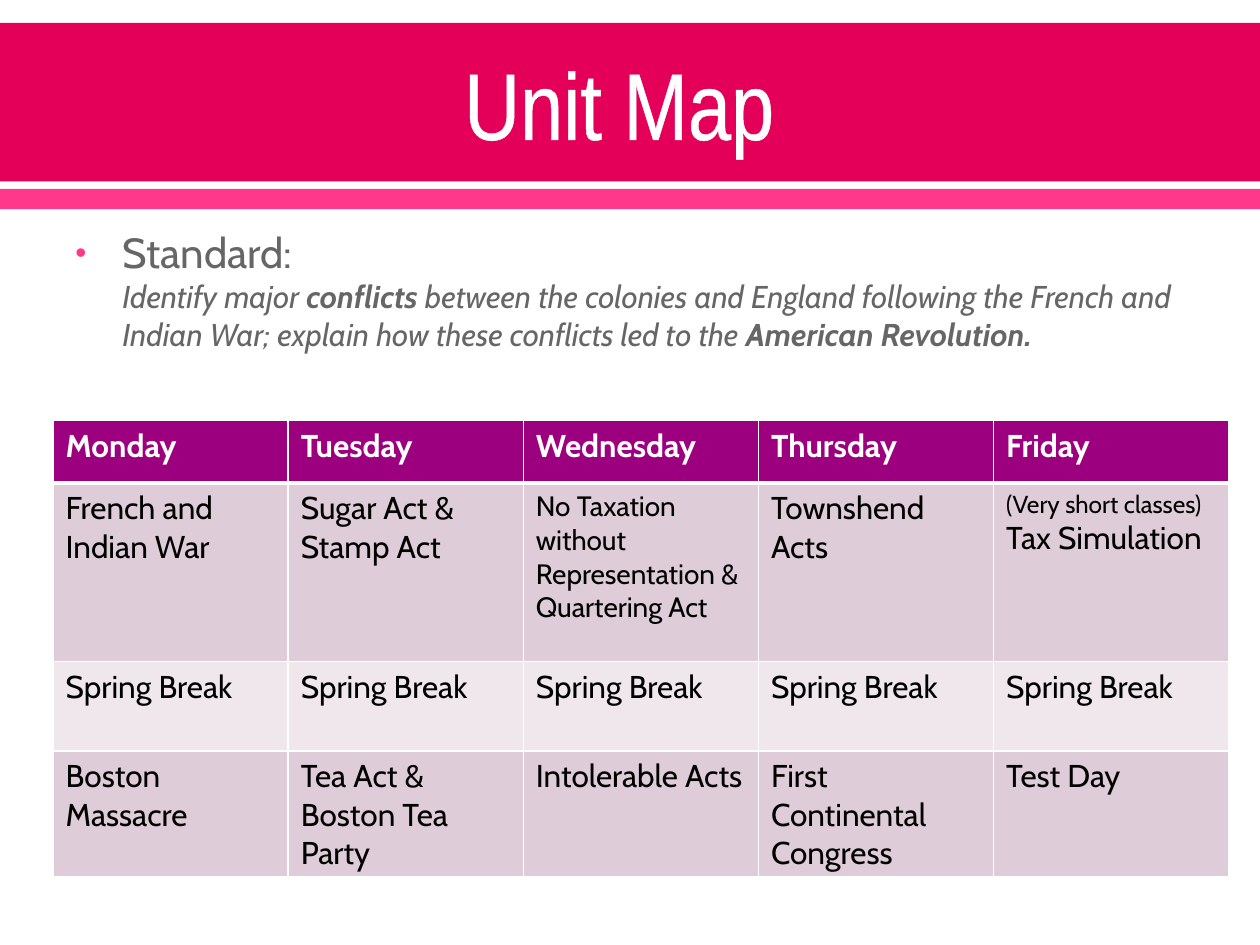
import pptx
import pptx.dml.color
import pptx.enum.shapes
import pptx.enum.text
import pptx.oxml
import pptx.oxml.ns
import pptx.util
from lxml import etree

Cm = pptx.util.Cm
Pt = pptx.util.Pt
COLORS = {
    "band": "E40059", "stripe": "FF388C", "header": "9C007F",
    "odd": "DECCD8", "even": "EFE7EC",
    "white": "FFFFFF", "grey": "666666", "black": "000000",
}
DAYS = ["Monday", "Tuesday", "Wednesday", "Thursday", "Friday"]
# A cell is a list of (text, size) paragraphs or a plain string.
WEEKS = [
    ["French and Indian War", "Sugar Act & Stamp Act",
     [("No Taxation without Representation & Quartering Act", 16)],
     "Townshend Acts",
     [("(Very short classes)", 14), ("Tax Simulation", 18)]],
    ["Spring Break"] * len(DAYS),
    ["Boston Massacre", "Tea Act & Boston Tea Party", "Intolerable Acts",
     "First Continental Congress", "Test Day"],
]
ROW_HEIGHTS = [1.26, 3.6, 1.8, 2.53]


def rgb(name):
    return pptx.dml.color.RGBColor.from_string(COLORS[name])


def add_run(paragraph, text, size=18, color="black", font="Cabin", bold=False, italic=False):
    run = paragraph.add_run()
    run.text = text
    run.font.size = Pt(size)
    run.font.name = font
    run.font.bold = bold
    run.font.italic = italic
    run.font.color.rgb = rgb(color)
    return run


def add_xml(parent, markup):
    """Append DrawingML elements, in the order they are written."""
    ns = pptx.oxml.ns.nsdecls("a")
    for element in list(pptx.oxml.parse_xml(f"<a:root {ns}>{markup}</a:root>")):
        parent.append(element)


def border_xml(side, width):
    return (f'<a:{side} w="{Pt(width)}"><a:solidFill><a:srgbClr val="{COLORS["white"]}"/>'
            f'</a:solidFill></a:{side}>')


class UnitMapSlide:
    def __init__(self, deck):
        self.slide = deck.slides.add_slide(deck.slide_layouts[6])

    def band(self, top, height, color):
        band = self.slide.shapes.add_shape(
            pptx.enum.shapes.MSO_SHAPE.RECTANGLE, 0, Cm(top), Cm(25.4), Cm(height))
        band.shadow.inherit = False
        band.fill.solid()
        band.fill.fore_color.rgb = rgb(color)
        band.line.fill.background()

    def text_frame(self, top, height, anchor):
        frame = self.slide.shapes.add_textbox(Cm(1.27), Cm(top), Cm(22.86), Cm(height)).text_frame
        frame.word_wrap = True
        frame.vertical_anchor = anchor
        return frame

    def title(self, text):
        heading = self.text_frame(0.51, 3.1, pptx.enum.text.MSO_ANCHOR.MIDDLE).paragraphs[0]
        heading.alignment = pptx.enum.text.PP_ALIGN.CENTER
        run = add_run(heading, text, 54, "white", "Arial Narrow")
        run.font.fill  # the outline precedes the fill in the run properties
        run.font._element.insert(0, pptx.oxml.parse_xml(
            border_xml("ln", 1.1).replace("<a:ln", f'<a:ln {pptx.oxml.ns.nsdecls("a")}', 1)))

    def standard(self, label, parts):
        """Add the bulleted standard; parts are (text, bold) pairs."""
        standard = self.text_frame(4.45, 12.57, pptx.enum.text.MSO_ANCHOR.TOP).paragraphs[0]
        properties = standard._p.get_or_add_pPr()
        properties.set("marL", str(Cm(0.95)))
        properties.set("indent", str(-Cm(0.95)))
        add_xml(properties,
                '<a:spcBef><a:spcPct val="20000"/></a:spcBef>'
                f'<a:buClr><a:srgbClr val="{COLORS["stripe"]}"/></a:buClr>'
                '<a:buSzPct val="75000"/><a:buFont typeface="Arial"/><a:buChar char="•"/>')
        add_run(standard, label, 24, "grey")
        standard.add_line_break()
        for text, bold in parts:
            add_run(standard, text, color="grey", bold=bold, italic=True)

    def cell(self, cell, content, fill, color="black", bold=False, bottom=1):
        cell.fill.solid()
        cell.fill.fore_color.rgb = rgb(fill)
        lines = [(content, 18)] if isinstance(content, str) else content
        for index, (text, size) in enumerate(lines):
            frame = cell.text_frame
            paragraph = frame.add_paragraph() if index else frame.paragraphs[0]
            add_run(paragraph, text, size, color, bold=bold)
        properties = cell._tc.get_or_add_tcPr()
        fill_element = properties[0]
        widths = {"lnL": 1, "lnR": 1, "lnT": 1, "lnB": bottom}
        add_xml(properties, "".join(border_xml(*side) for side in widths.items()))
        properties.append(fill_element)

    def calendar(self, days, weeks):
        column_width = Cm(4.74)
        table = self.slide.shapes.add_table(
            len(weeks) + 1, len(days), Cm(1.07), Cm(8.48),
            column_width * len(days), Cm(sum(ROW_HEIGHTS))).table
        for column in table.columns:
            column.width = column_width
        for row, height in zip(table.rows, ROW_HEIGHTS):
            row.height = Cm(height)
        for column, day in enumerate(days):
            self.cell(table.cell(0, column), day, "header", "white", bold=True, bottom=3)
        for row, week in enumerate(weeks, 1):
            for column, lesson in enumerate(week):
                self.cell(table.cell(row, column), lesson, "odd" if row % 2 else "even")


def main():
    deck = pptx.Presentation()
    deck.slide_width, deck.slide_height = Cm(25.4), Cm(19.05)
    unit_map = UnitMapSlide(deck)
    unit_map.band(0.46, 3.2, "band")
    unit_map.band(3.81, 0.41, "stripe")
    unit_map.title("Unit Map ")
    unit_map.standard("Standard:", [
        ("Identify major ", False),
        ("conflicts", True),
        (" between the colonies and England following the French and Indian War; "
         "explain how these conflicts led to the ", False),
        ("American Revolution.", True),
    ])
    unit_map.calendar(DAYS, WEEKS)
    deck.save("out.pptx")


if __name__ == "__main__":
    main()
